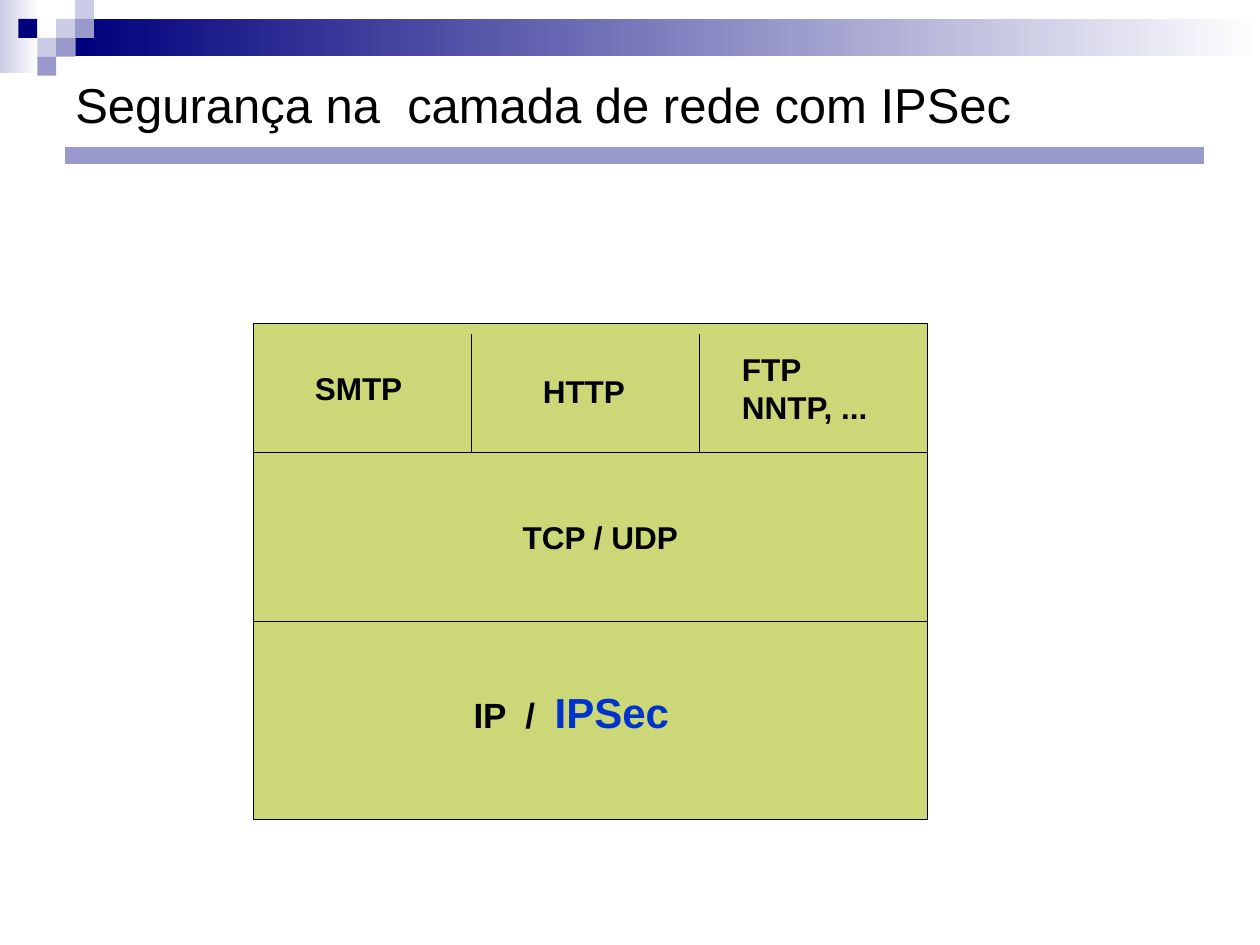
from lxml.etree import SubElement
from pptx import Presentation
from pptx.dml.color import RGBColor
from pptx.enum.shapes import MSO_CONNECTOR, MSO_SHAPE
from pptx.enum.text import MSO_ANCHOR
from pptx.oxml.ns import qn
from pptx.util import Pt

NAVY = RGBColor(0x00, 0x00, 0x7D)
LAVENDER = RGBColor(0xCC, 0xCC, 0xE6)
PERIWINKLE = RGBColor(0x99, 0x99, 0xCC)
GREEN = RGBColor(0xCC, 0xD7, 0x77)
BLUE = RGBColor(0x00, 0x33, 0xCC)
BLACK = RGBColor(0x00, 0x00, 0x00)
WHITE = RGBColor(0xFF, 0xFF, 0xFF)

# Corner mosaic: column, row, colour
TILE = 10.8
MOSAIC_LEFT = 10.5
MOSAIC = [
    (3, 1, LAVENDER), (4, 0, LAVENDER), (4, 1, PERIWINKLE),
    (2, 2, LAVENDER), (1, 1, NAVY), (3, 2, PERIWINKLE), (2, 3, PERIWINKLE),
]

# Protocol stack edges
STACK_LEFT, STACK_RIGHT = 144.7, 530
STACK_TOP, STACK_BOTTOM = 185, 468.5
LAYER_EDGES = (258.5, 355)
COLUMN_EDGES = (269.3, 399.6)
COLUMN_TOP = 190.8

# Protocol labels: text, left, top, width, height
LABELS = [
    ("HTTP", 303.1, 208.8, 62.6, 28.8),
    ("SMTP", 172.8, 207.4, 85.7, 28.8),
    ("FTP\vNNTP, ...", 416.9, 196.6, 107.3, 50.4),
    (" TCP / UDP", 286.6, 292.3, 118.8, 28.8),
]


def add_rectangle(slide, left, top, width, height, color, fade_to=None, outline=None):
    shape = slide.shapes.add_shape(
        MSO_SHAPE.RECTANGLE, Pt(left), Pt(top), Pt(width), Pt(height))
    shape.shadow.inherit = False
    if fade_to is None:
        shape.fill.solid()
        shape.fill.fore_color.rgb = color
    else:
        shape.fill.gradient()
        shape.fill.gradient_angle = 0
        for stop, stop_color in zip(shape.fill.gradient_stops, (color, fade_to)):
            stop.color.rgb = stop_color
    if outline is None:
        shape.line.fill.background()
    else:
        shape.line.color.rgb = outline
        shape.line.width = Pt(0.75)


def add_line(slide, x1, y1, x2, y2, color=BLACK, width=0.75):
    line = slide.shapes.add_connector(
        MSO_CONNECTOR.STRAIGHT, Pt(x1), Pt(y1), Pt(x2), Pt(y2))
    line.line.color.rgb = color
    line.line.width = Pt(width)
    SubElement(line._element.spPr, qn("a:effectLst"))


def add_span(para, text, size=18, color=BLACK, bold=True):
    for index, part in enumerate(text.split("\v")):
        if index:
            para.add_line_break()
        span = para.add_run()
        span.text = part
        span.font.name = "Arial"
        span.font.size = Pt(size)
        span.font.bold = bold
        span.font.color.rgb = color


def add_text(slide, text, left, top, width, height, anchor=MSO_ANCHOR.TOP, **style):
    box = slide.shapes.add_textbox(Pt(left), Pt(top), Pt(width), Pt(height))
    box.text_frame.word_wrap = True
    box.text_frame.vertical_anchor = anchor
    para = box.text_frame.paragraphs[0]
    add_span(para, text, **style)
    return para


def add_banner(slide):
    add_rectangle(slide, 0, 0, 22.3, 41.8, LAVENDER, fade_to=WHITE)
    add_rectangle(slide, 43, TILE, 677, 21.4, NAVY, fade_to=WHITE)
    for column, row, color in MOSAIC:
        left = MOSAIC_LEFT + (column - 1) * TILE
        add_rectangle(slide, left, row * TILE, TILE, TILE, color)


def add_stack(slide):
    add_rectangle(slide, STACK_LEFT, STACK_TOP, STACK_RIGHT - STACK_LEFT,
                  STACK_BOTTOM - STACK_TOP, GREEN, outline=BLACK)
    for y in LAYER_EDGES:
        add_line(slide, STACK_LEFT, y, STACK_RIGHT, y)
    for x in COLUMN_EDGES:
        add_line(slide, x, COLUMN_TOP, x, LAYER_EDGES[0])


def main():
    deck = Presentation()
    deck.slide_width, deck.slide_height = Pt(720), Pt(540)
    page = deck.slides.add_slide(deck.slide_layouts[6])

    # Banner, title and rule
    add_banner(page)
    add_line(page, 36.9, 88.9, 688.3, 88.9, color=PERIWINKLE, width=10)
    add_text(page, "Segurança na  camada de rede com IPSec", 36, 36, 648, 46.8,
             anchor=MSO_ANCHOR.MIDDLE, size=28, bold=False)

    # Protocol layers and their labels
    add_stack(page)
    for label in LABELS:
        add_text(page, *label)
    network = add_text(page, "IP  /  ", 263.5, 388.8, 136.1, 36, size=20)
    add_span(network, "IPSec", size=24, color=BLUE)

    deck.save("out.pptx")


if __name__ == "__main__":
    main()
